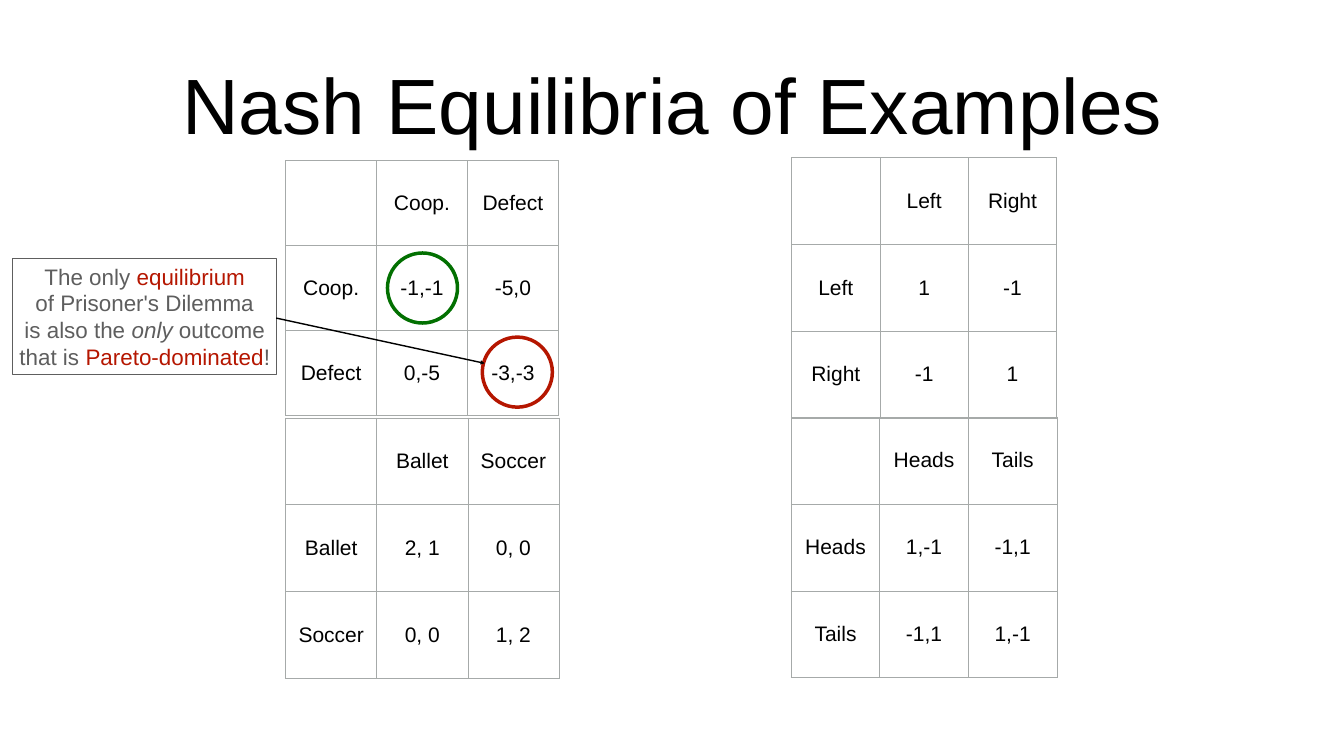
from dataclasses import dataclass

from lxml.etree import SubElement
from pptx import Presentation
from pptx.dml.color import RGBColor
from pptx.enum.shapes import MSO_CONNECTOR, MSO_SHAPE
from pptx.enum.text import MSO_ANCHOR, PP_ALIGN
from pptx.oxml.ns import qn
from pptx.util import Cm, Pt


@dataclass(frozen=True)
class Theme:
    """Colours, font and type sizes of the slide."""
    font: str = "Arial"
    black: str = "000000"
    grey: str = "5E5E5E"
    red: str = "B51600"
    green: str = "027001"
    grid: str = "A6AAA9"
    title: int = 112
    note: int = 32
    cell: int = 30


T = Theme()
GAMES = [
    ((14.4, 8.08, 13.74, 12.85), ("Coop.", "Defect"),
     (("-1,-1", "-5,0"), ("0,-5", "-3,-3"))),
    ((39.88, 21.03, 13.39, 13.13), ("Heads", "Tails"),
     (("1,-1", "-1,1"), ("-1,1", "1,-1"))),
    ((39.9, 7.95, 13.36, 13.11), ("Left", "Right"),
     (("1", "-1"), ("-1", "1"))),
    ((14.4, 21.06, 13.77, 13.13), ("Ballet", "Soccer"),
     (("2, 1", "0, 0"), ("0, 0", "1, 2"))),
]
NOTE = [
    [("The only ", T.grey, False), ("equilibrium", T.red, False)],
    [("of Prisoner's Dilemma", T.grey, False)],
    [("is also the ", T.grey, False), ("only", T.grey, True),
     (" outcome", T.grey, False)],
    [("that is ", T.grey, False), ("Pareto-dominated", T.red, False),
     ("!", T.grey, False)],
]


def style_run(r, size, color, italic=False):
    """Apply the theme font with a size and colour to a run."""
    r.font.name, r.font.size, r.font.italic = T.font, Pt(size), italic
    r.font.color.rgb = RGBColor.from_string(color)


def set_margins(obj, margin):
    """Give a cell or text frame four equal margins."""
    obj.margin_left = obj.margin_right = Cm(margin)
    obj.margin_top = obj.margin_bottom = Cm(margin)


def set_line(s, color, width):
    """Set the outline of a shape or connector."""
    s.line.color.rgb = RGBColor.from_string(color)
    s.line.width = Pt(width)


def set_borders(cell):
    """Draw a thin grid line on each side of a table cell."""
    pr = cell._tc.get_or_add_tcPr()
    for i, side in enumerate(("lnL", "lnR", "lnT", "lnB")):
        ln = pr.makeelement(qn(f"a:{side}"), {"w": str(Pt(1))})
        fill = SubElement(ln, qn("a:solidFill"))
        SubElement(fill, qn("a:srgbClr"), val=T.grid)
        pr.insert(i, ln)


def add_title(slide, box, text):
    """Place the centred slide title in the box."""
    tf = slide.shapes.add_textbox(*map(Cm, box)).text_frame
    tf.word_wrap, tf.vertical_anchor = True, MSO_ANCHOR.MIDDLE
    set_margins(tf, 0.2)
    tf.text = text
    p = tf.paragraphs[0]
    p.alignment = PP_ALIGN.CENTER
    style_run(p.runs[0], T.title, T.black)


def add_game(slide, box, actions, payoffs):
    """Fill the box with the payoff matrix of a symmetric action set."""
    rows = [("", *actions)]
    rows += [(action, *row) for action, row in zip(actions, payoffs)]
    n = len(rows)
    table = slide.shapes.add_table(n, n, *map(Cm, box)).table
    table.first_row = table.horz_banding = False
    for i, row in enumerate(rows):
        table.columns[i].width = Cm(box[2] / n)
        table.rows[i].height = Cm(box[3] / n)
        for j, text in enumerate(row):
            cell = table.cell(i, j)
            cell.fill.background()
            cell.vertical_anchor = MSO_ANCHOR.MIDDLE
            set_margins(cell, 0.15)
            set_borders(cell)
            cell.text_frame.text = text
            p = cell.text_frame.paragraphs[0]
            p.alignment = PP_ALIGN.CENTER
            for r in p.runs:
                style_run(r, T.cell, T.black)


def add_outline(slide, kind, box, color, width):
    """Place an unfilled preset shape in the box."""
    s = slide.shapes.add_shape(kind, *map(Cm, box))
    s.shadow.inherit = False
    s.fill.background()
    set_line(s, color, width)
    return s


def add_note(slide, box, lines):
    """Place the framed remark in the box."""
    tf = add_outline(slide, MSO_SHAPE.RECTANGLE, box, T.grey, 2).text_frame
    tf.word_wrap, tf.vertical_anchor = False, MSO_ANCHOR.MIDDLE
    set_margins(tf, 0.2)
    for i, line in enumerate(lines):
        p = tf.add_paragraph() if i else tf.paragraphs[0]
        p.alignment = PP_ALIGN.CENTER
        for text, color, italic in line:
            r = p.add_run()
            r.text = text
            style_run(r, T.note, color, italic)


def add_arrow(slide, start, end):
    """Draw an arrow between two points."""
    s = slide.shapes.add_connector(
        MSO_CONNECTOR.STRAIGHT, *map(Cm, (*start, *end)))
    set_line(s, T.black, 2)
    SubElement(s.line._get_or_add_ln(), qn("a:tailEnd"), type="triangle")
    SubElement(s._element.spPr, qn("a:effectLst"))


def main():
    """Build and save the slide."""
    prs = Presentation()
    prs.slide_width, prs.slide_height = Cm(67.74), Cm(38.1)
    slide = prs.slides.add_slide(prs.slide_layouts[6])
    add_title(slide, (7.42, 0.99, 52.91, 8.43), "Nash Equilibria of Examples")
    for box, actions, payoffs in GAMES:
        add_game(slide, box, actions, payoffs)
    add_note(slide, (0.64, 13.03, 13.31, 5.84), NOTE)
    for x, y, color in ((24.31, 16.99, T.red), (19.53, 12.75, T.green)):
        add_outline(slide, MSO_SHAPE.OVAL, (x, y, 3.53, 3.53), color, 5)
    add_arrow(slide, (13.92, 16.03), (24.43, 18.31))
    prs.save("out.pptx")


if __name__ == "__main__":
    main()
